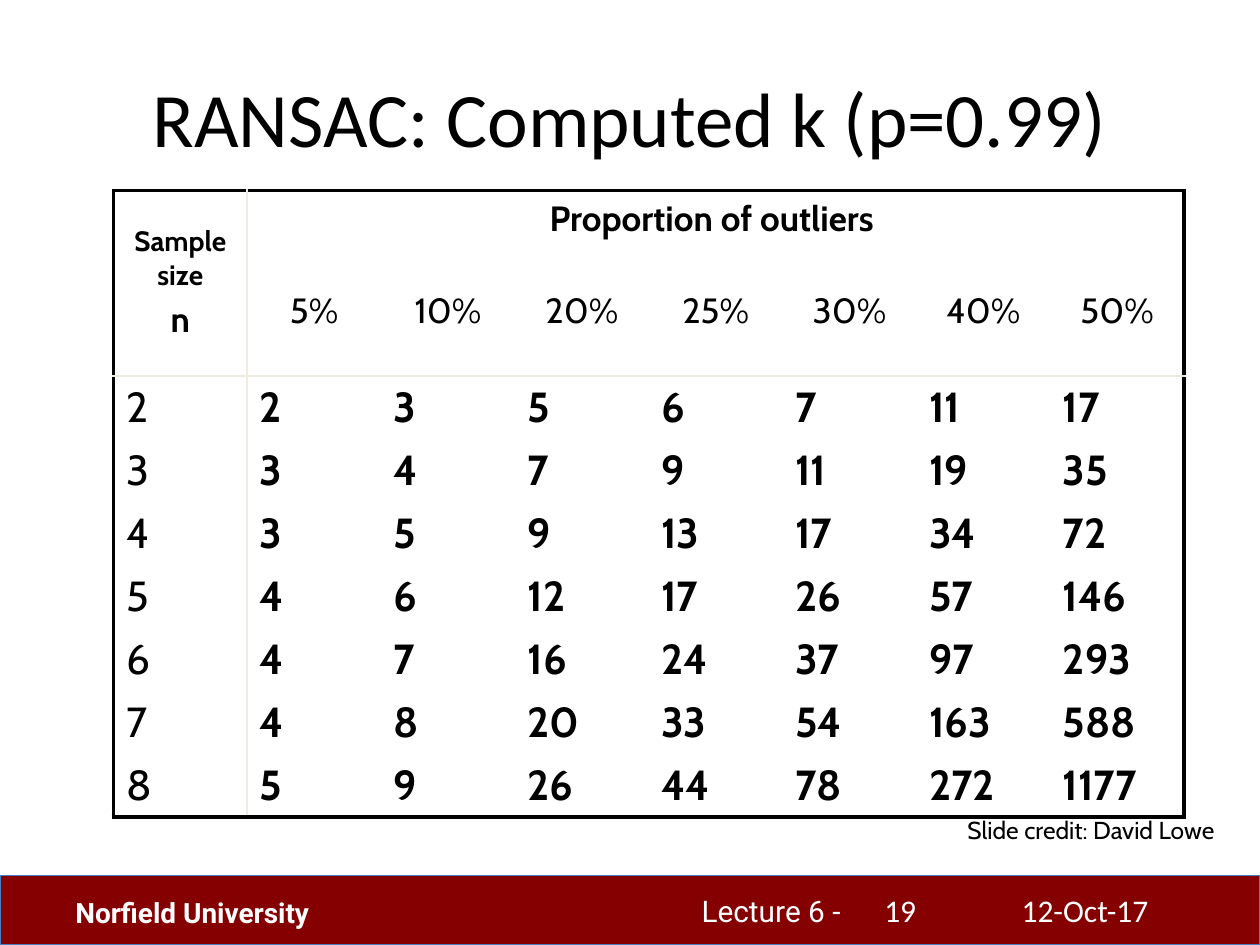
from lxml.etree import SubElement
from pptx import Presentation
from pptx.dml.color import RGBColor
from pptx.enum.shapes import MSO_SHAPE as Shape
from pptx.enum.text import MSO_ANCHOR as Anchor, PP_ALIGN as Align
from pptx.oxml.ns import qn
from pptx.util import Inches, Pt

BLACK = RGBColor(0x00, 0x00, 0x00)
WHITE = RGBColor(0xFF, 0xFF, 0xFF)
MAROON = RGBColor(0x85, 0x00, 0x00)
BLUE = RGBColor(0x4B, 0x7E, 0xBC)
CREAM = RGBColor(0xEE, 0xEC, 0xE1)

# Content
OUTLIERS = ["5%", "10%", "20%", "25%", "30%", "40%", "50%"]
TRIALS = {  # sample size: number of samples for each share of outliers
    2: [2, 3, 5, 6, 7, 11, 17],
    3: [3, 4, 7, 9, 11, 19, 35],
    4: [3, 5, 9, 13, 17, 34, 72],
    5: [4, 6, 12, 17, 26, 57, 146],
    6: [4, 7, 16, 24, 37, 97, 293],
    7: [4, 8, 20, 33, 54, 163, 588],
    8: [5, 9, 26, 44, 78, 272, 1177],
}
TITLE = ("RANSAC: Computed k (p=0.99)", (0.5, 0.3, 9, 1.25),
         dict(name="Calibri", size=Pt(44)), BLACK)
CREDIT = ("Slide credit: David Lowe", (7.58, 6.42, 2.34, 0.34),
          dict(name="Cabin", size=Pt(14)), BLACK)
FOOTER = [
    ("Lecture 6 -", (5.47, 7.04, 1.4, 0.36), dict(name="Roboto", size=Pt(17)), WHITE),
    ("Norfield University", (0.5, 7.06, 2.67, 0.37),
     dict(name="Roboto", size=Pt(16), bold=True), WHITE),
    ("12-Oct-17", (8.01, 7.02, 1.74, 0.4), dict(name="Calibri", size=Pt(18)), WHITE),
    ("19", (6.92, 7.02, 1.1, 0.4), dict(name="Calibri", size=Pt(18)), WHITE),
]

deck = Presentation()
deck.slide_width, deck.slide_height = Inches(10), Inches(7.5)
page = deck.slides.add_slide(deck.slide_layouts[6])


def write(para, text, font, color):
    span = para.add_run()
    span.text = text
    for key, value in font.items():
        setattr(span.font, key, value)
    span.font.color.rgb = color


def add_text(text, place, font, color, align=Align.LEFT, anchor=Anchor.TOP, wrap=True):
    frame = page.shapes.add_textbox(*map(Inches, place)).text_frame
    frame.word_wrap, frame.vertical_anchor = wrap, anchor
    frame.paragraphs[0].alignment = align
    write(frame.paragraphs[0], text, font, color)


def fill_cell(cell, lines, align=Align.LEFT):
    """Write (text, size, bold) lines, each with a 20% gap above."""
    cell.vertical_anchor = Anchor.MIDDLE
    for index, (text, size, bold) in enumerate(lines):
        frame = cell.text_frame
        para = frame.add_paragraph() if index else frame.paragraphs[0]
        para.alignment = align
        gap = SubElement(para._p.get_or_add_pPr(), qn("a:spcBef"))
        SubElement(gap, qn("a:spcPct"), val="20000")
        write(para, text, dict(name="Cabin", size=Pt(size), bold=bold), BLACK)


def set_border(cell, side, color, width):
    line = SubElement(cell._tc.get_or_add_tcPr(), qn(f"a:ln{side}"), w=str(Pt(width)))
    if color is None:
        SubElement(line, qn("a:noFill"))
    else:
        SubElement(SubElement(line, qn("a:solidFill")), qn("a:srgbClr"), val=str(color))


# Footer band
band = page.shapes.add_shape(Shape.RECTANGLE, 0, Inches(6.95), Inches(10), Inches(0.55))
band.shadow.inherit = False
band.fill.solid()
band.fill.fore_color.rgb = MAROON
band.line.color.rgb, band.line.width = BLUE, Pt(0.75)
for item in FOOTER:
    add_text(*item)

add_text(*TITLE, align=Align.CENTER, anchor=Anchor.MIDDLE)

# Table grid: two header rows, then one row for each sample size
rows, cols = 2 + len(TRIALS), 1 + len(OUTLIERS)
table = page.shapes.add_table(rows, cols, Inches(0.9), Inches(1.51),
                              Inches(8.5), Inches(4.53)).table
table.first_row = table.horz_banding = False
for column in table.columns:
    column.width = Inches(8.5 / cols)
for index, row in enumerate(table.rows):
    row.height = Inches(0.49 if index else 0.45)
table.cell(0, 0).merge(table.cell(1, 0))
table.cell(0, 1).merge(table.cell(0, cols - 1))

# Table text
fill_cell(table.cell(0, 0), [("Sample size", 16, True), ("n", 20, True)], Align.CENTER)
fill_cell(table.cell(0, 1), [("Proportion of outliers ", 20, True)], Align.CENTER)
for c, share in enumerate(OUTLIERS, 1):
    fill_cell(table.cell(1, c), [(share, 20, False)], Align.CENTER)
for r, (size, counts) in enumerate(TRIALS.items(), 2):
    for c, number in enumerate([size, *counts]):
        fill_cell(table.cell(r, c), [(str(number), 24, c > 0)])

# Table borders: black frame, pale rules after the headers
OUTER, INNER, NONE = (BLACK, 2.25), (CREAM, 1), (None, 0)
for r in range(rows):
    for c in range(cols):
        cell = table.cell(r, c)
        last_r, last_c = r, c
        if cell.is_merge_origin:
            last_r += cell.span_height - 1
            last_c += cell.span_width - 1
        set_border(cell, "L", *{0: OUTER, 1: INNER}.get(c, NONE))
        set_border(cell, "R", *{cols - 1: OUTER, 0: INNER}.get(last_c, NONE))
        set_border(cell, "T", *{0: OUTER, 2: INNER}.get(r, NONE))
        set_border(cell, "B", *{rows - 1: OUTER, 1: INNER}.get(last_r, NONE))
        cell.fill.background()

add_text(*CREDIT, wrap=False)

deck.save("out.pptx")
